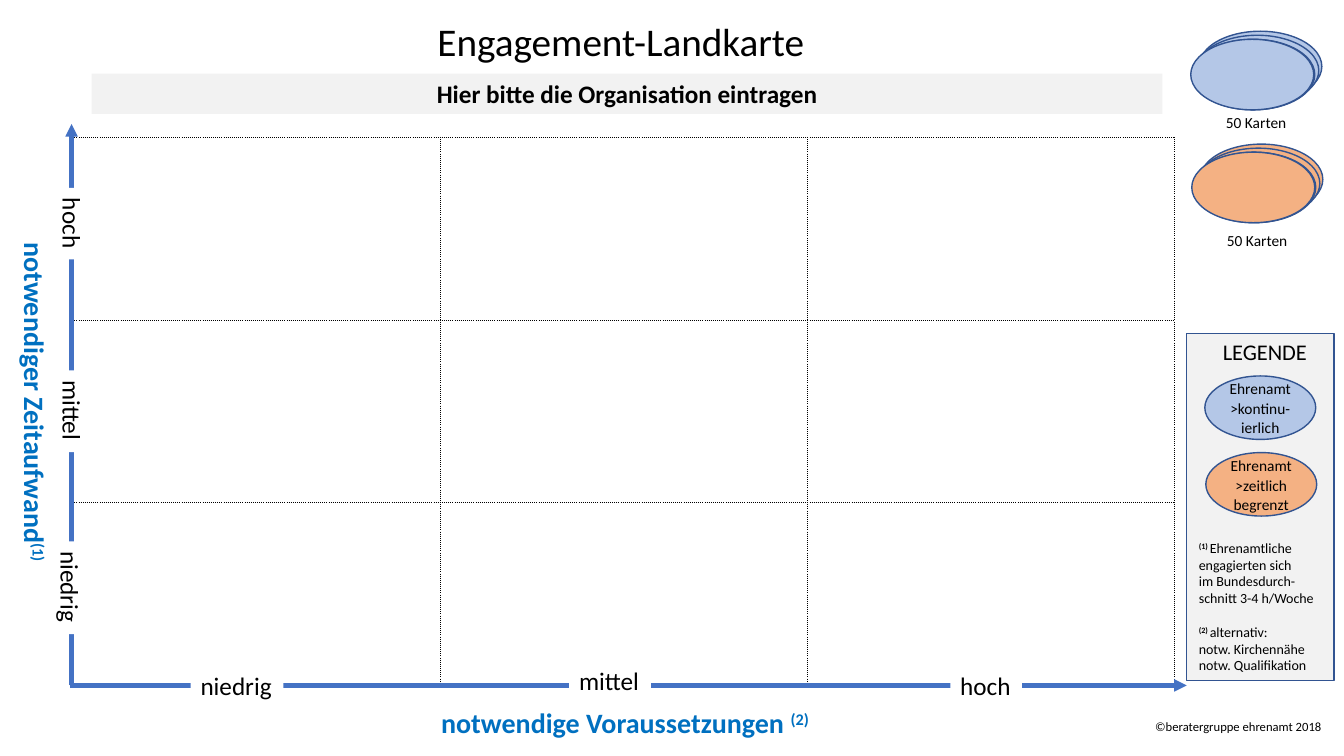
from dataclasses import dataclass

from lxml.etree import SubElement
from pptx import Presentation
from pptx.dml.color import RGBColor
from pptx.enum.shapes import MSO_CONNECTOR as Connector, MSO_SHAPE as Shape
from pptx.enum.text import MSO_ANCHOR as Anchor, MSO_AUTO_SIZE as AutoSize, PP_ALIGN as Align
from pptx.oxml.ns import qn
from pptx.util import Inches, Pt


@dataclass(frozen=True)
class Theme:
    font: str = "Calibri"
    black: str = "000000"
    white: str = "FFFFFF"
    grey: str = "F2F2F2"
    outline: str = "325491"
    axis: str = "4472C4"
    heading: str = "0070C0"
    ongoing: str = "B4C7E7"
    limited: str = "F4B183"
    title_size: int = 28
    axis_title_size: int = 20
    label_size: int = 18
    legend_size: int = 16
    card_size: int = 11
    note_size: int = 10
    footer_size: int = 9


@dataclass(frozen=True)
class Box:
    left: float
    top: float
    width: float
    height: float

    def inner(self, column, row, width, height):
        return Box(self.left + column, self.top + row, width, height)

    def centred(self, column, row, width, height):
        return self.inner(column - width / 2, row - height / 2, width, height)

    def lengths(self):
        return [Inches(side) for side in (self.left, self.top, self.width, self.height)]


THEME = Theme()
COLUMNS, ROWS = 13.33, 7.5
LABEL_HEIGHT = 0.4
LEVELS = {"niedrig": 0.92, "mittel": 0.81, "hoch": 0.71}


def rgb(value):
    return RGBColor.from_string(value)


def style(span, size, color=THEME.black, bold=False, raised=False):
    span.font.name = THEME.font
    span.font.size = Pt(size)
    span.font.bold = bold
    span.font.color.rgb = rgb(color)
    if raised:
        span._r.get_or_add_rPr().set("baseline", "30000")


def add_figure(page, kind, box, fill, line=None):
    figure = page.shapes.add_shape(kind, *box.lengths())
    figure.shadow.inherit = False
    figure.fill.solid()
    figure.fill.fore_color.rgb = rgb(fill)
    if line:
        figure.line.color.rgb = rgb(line)
        figure.line.width = Pt(1)
    else:
        figure.line.fill.background()
    return figure


def write(holder, text, size, align=Align.LEFT, bold=False, wrap=False, anchor=Anchor.TOP):
    frame = holder.text_frame
    frame.text = text
    frame.word_wrap = wrap
    frame.vertical_anchor = anchor
    frame.auto_size = AutoSize.NONE if wrap else AutoSize.SHAPE_TO_FIT_TEXT
    for para in frame.paragraphs:
        para.alignment = align
        for span in para.runs:
            style(span, size, bold=bold)
    return frame


def set_insets(frame, inset):
    frame.margin_left = frame.margin_right = Inches(inset)
    frame.margin_top = frame.margin_bottom = Inches(inset)


def add_text(page, box, text, size, align=Align.LEFT):
    return write(page.shapes.add_textbox(*box.lengths()), text, size, align)


def add_axis(page, start, end):
    axis = page.shapes.add_connector(Connector.STRAIGHT, *(Inches(at) for at in start + end))
    axis.line.color.rgb = rgb(THEME.axis)
    axis.line.width = Pt(3)
    properties = axis._element.spPr
    SubElement(properties.find(qn("a:ln")), qn("a:tailEnd"), type="triangle")
    SubElement(properties, qn("a:effectLst"))


def add_axis_title(page, box, text, mark, rotation=0):
    title = add_figure(page, Shape.RECTANGLE, box, THEME.white)
    title.rotation = rotation
    frame = write(title, text, THEME.axis_title_size, Align.CENTER, wrap=True, anchor=Anchor.MIDDLE)
    para = frame.paragraphs[0]
    para.add_run().text = mark
    for span in para.runs:
        style(span, THEME.axis_title_size, THEME.heading, True, span.text == mark)


def add_level(page, box, level, rotation=0):
    label = add_figure(page, Shape.RECTANGLE, box, THEME.white)
    label.rotation = rotation
    write(label, level, THEME.label_size)


def dot_borders(cell):
    properties = cell._tc.get_or_add_tcPr()
    for side in ("a:lnL", "a:lnR", "a:lnT", "a:lnB"):
        border = SubElement(properties, qn(side), w=str(Pt(0.5)))
        fill = SubElement(border, qn("a:solidFill"))
        SubElement(fill, qn("a:srgbClr"), val=THEME.black)
        SubElement(border, qn("a:prstDash"), val="sysDot")
    cell.fill.background()


def draw_header(page, box):
    add_text(page, box.inner(3.33, 0, 3.98, 0.57), "Engagement-Landkarte", THEME.title_size)
    bar = add_figure(page, Shape.RECTANGLE, box.inner(0, 0.61, box.width, LABEL_HEIGHT), THEME.grey)
    write(bar, "Hier bitte die Organisation eintragen", THEME.label_size,
          Align.CENTER, bold=True, wrap=True, anchor=Anchor.MIDDLE)


def draw_map(page, box):
    add_axis_title(page, box.centred(-0.37, 2.63, 4.5, LABEL_HEIGHT),
                   "notwendiger Zeitaufwand", "(1)", 90)
    table = page.shapes.add_table(3, 3, *box.lengths()).table
    table.first_row = table.horz_banding = False
    for cell in table.iter_cells():
        dot_borders(cell)
    base = box.top + box.height
    add_axis(page, (box.left - 0.03, base), (box.left + box.width + 0.12, base))
    for (level, width), column, lift in zip(LEVELS.items(), (1.63, 5.33, 9.06), (0, 0.05, 0)):
        add_level(page, box.centred(column, box.height - lift, width, LABEL_HEIGHT), level)
    add_axis(page, (box.left - 0.01, base), (box.left - 0.01, box.top - 0.13))
    for (level, width), row, column in zip(LEVELS.items(), (4.47, 2.72, 0.86), (-0.02, 0, 0)):
        add_level(page, box.centred(column, row, width, LABEL_HEIGHT), level, 90)
    add_axis_title(page, box.centred(5.48, 5.81, 4.5, LABEL_HEIGHT),
                   "notwendige Voraussetzungen ", "(2)")


def draw_stack(page, box, color, caption_row):
    for column, row in ((0.08, 0), (0.05, 0.04), (0.01, 0.08), (0, 0.08)):
        add_figure(page, Shape.OVAL, box.inner(column, row, 1.22, 0.7), color, THEME.outline)
    add_text(page, box.inner(0.25, caption_row, 0.82, 0.28), "50 Karten", THEME.card_size)


def draw_legend(page, box):
    add_figure(page, Shape.RECTANGLE, box, THEME.grey, THEME.outline)
    add_text(page, box.inner(0.12, 0, 1.31, 0.37), "LEGENDE", THEME.legend_size, Align.CENTER)
    cards = ((0.18, 0.42, THEME.ongoing, "Ehrenamt\n>kontinu-ierlich"),
             (0.19, 1.18, THEME.limited, "Ehrenamt\n>zeitlich begrenzt"))
    for column, row, color, text in cards:
        card = add_figure(page, Shape.OVAL, box.inner(column, row, 1.1, 0.63), color, THEME.outline)
        frame = write(card, text, THEME.card_size, Align.CENTER, wrap=True, anchor=Anchor.MIDDLE)
        set_insets(frame, 0.04)
        for para in frame.paragraphs:
            para.line_spacing = Pt(14)
    draw_notes(page, box.inner(0.08, 2, 1.52, 1.43))


def draw_notes(page, box):
    notes = (("(1) ", "Ehrenamtliche"), ("", "engagierten sich"), ("", "im Bundesdurch-"),
             ("", "schnitt 3-4 h/Woche"), ("(2) ", "alternativ:"),
             ("", "notw. Kirchennähe"), ("", "notw. Qualifikation"))
    frame = page.shapes.add_textbox(*box.lengths()).text_frame
    frame.word_wrap = True
    set_insets(frame, 0.04)
    for index, (mark, text) in enumerate(notes):
        para = frame.add_paragraph() if index else frame.paragraphs[0]
        if mark:
            span = para.add_run()
            span.text = mark
            style(span, THEME.note_size, bold=True, raised=True)
            para.space_before = Pt(12 if index else 0)
        span = para.add_run()
        span.text = text
        style(span, THEME.note_size)


def draw_footer(page, box):
    add_text(page, box, "©beratergruppe ehrenamt 2018", THEME.footer_size)


def main():
    deck = Presentation()
    deck.slide_width, deck.slide_height = Inches(COLUMNS), Inches(ROWS)
    page = deck.slides.add_slide(deck.slide_layouts[6])
    draw_header(page, Box(0.91, 0.12, 10.62, 1.01))
    draw_legend(page, Box(11.77, 3.31, 1.46, 3.44))
    draw_map(page, Box(0.72, 1.36, 10.93, 5.44))
    draw_stack(page, Box(11.81, 0.31, 1.3, 1.04), THEME.ongoing, 0.76)
    draw_stack(page, Box(11.82, 1.43, 1.3, 1.1), THEME.limited, 0.81)
    draw_footer(page, Box(11.36, 7.08, 1.87, 0.25))
    deck.save("out.pptx")


if __name__ == "__main__":
    main()
